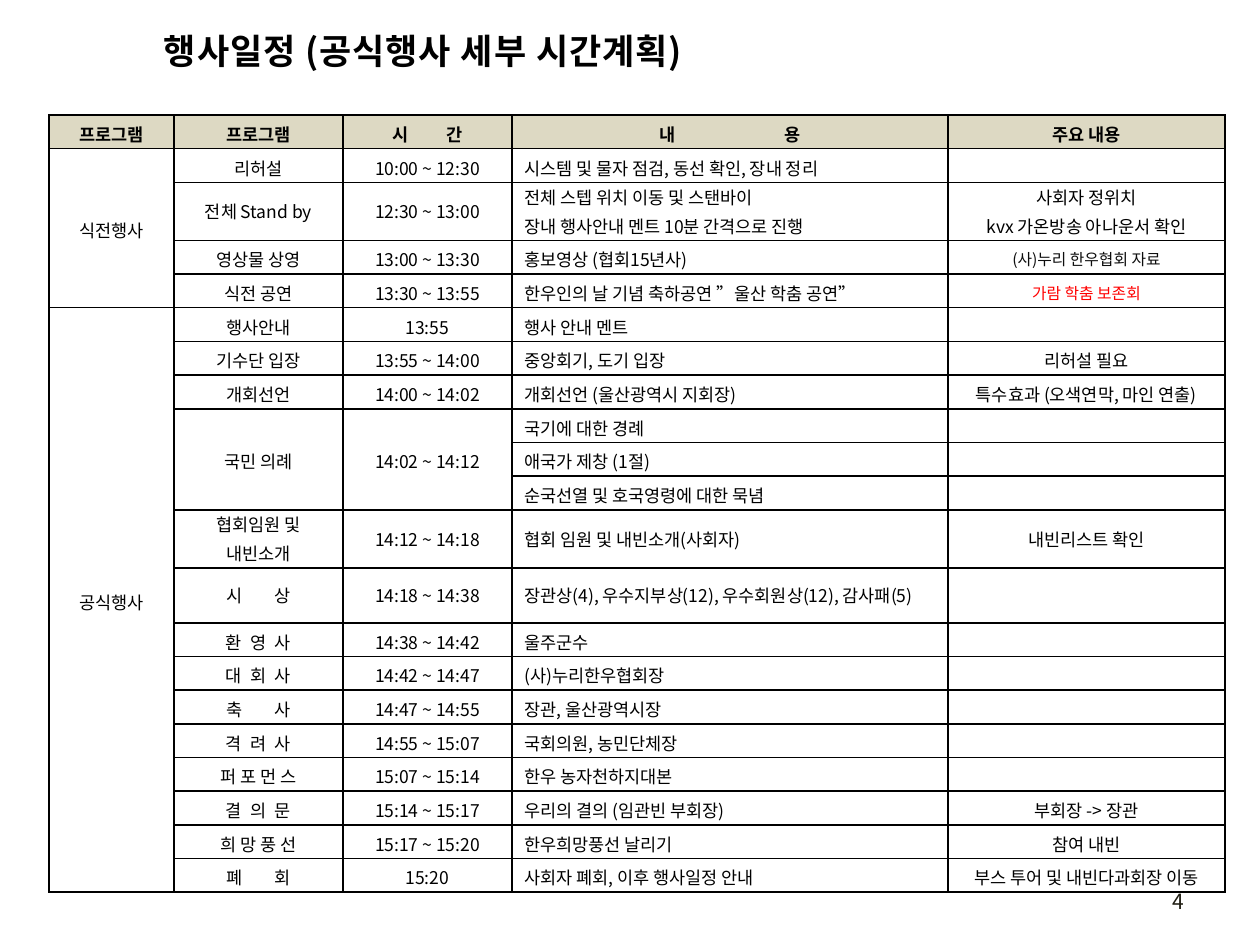
from typing import NamedTuple

from lxml.etree import SubElement
from pptx import Presentation
from pptx.dml.color import RGBColor
from pptx.enum.text import MSO_ANCHOR, PP_ALIGN
from pptx.oxml.ns import qn
from pptx.util import Pt

PX = 914400 // 126
FONT = "Noto Sans CJK KR"
COLORS = {"ink": "000000", "head": "DDD9C3", "soft": "0D0D0D",
          "red": "FF0000", "page": "1E1C11"}
COLS = [125, 169, 169, 436, 277]
BODY = 607          # height shared by the one-line rows
TALL = {2: 58, 11: 58, 12: 55}
# Letter spacing, in points, for words set wide
WIDE = {"시 간": 9.5, "내 용": 30, "시 상": 8, "축 사": 8, "폐 회": 8,
        "환 영 사": 1.3, "대 회 사": 1.3, "격 려 사": 1.3, "결 의 문": 1.3}
NOTES = {"(사)누리 한우협회 자료": "soft", "가람 학춤 보존회": "red"}


class Row(NamedTuple):
    name: str
    time: str
    text: str
    note: str = ""
    group: str = ""


class Span(NamedTuple):
    top: int
    col: int
    count: int


HEAD = Row("프로그램", "시 간", "내 용", "주요 내용", "프로그램")
ROWS = [
    HEAD,
    Row("리허설", "10:00 ~ 12:30", "시스템 및 물자 점검, 동선 확인, 장내 정리", group="식전행사"),
    Row("전체 Stand by", "12:30 ~ 13:00",
        "전체 스텝 위치 이동 및 스탠바이\n장내 행사안내 멘트 10분 간격으로 진행",
        "사회자 정위치\nkvx 가온방송 아나운서 확인"),
    Row("영상물 상영", "13:00 ~ 13:30", "홍보영상 (협회15년사)", "(사)누리 한우협회 자료"),
    Row("식전 공연", "13:30 ~ 13:55", "한우인의 날 기념 축하공연 ”울산 학춤 공연”", "가람 학춤 보존회"),
    Row("행사안내", "13:55", "행사 안내 멘트", group="공식행사"),
    Row("기수단 입장", "13:55 ~ 14:00", "중앙회기, 도기 입장", "리허설 필요"),
    Row("개회선언", "14:00 ~ 14:02", "개회선언 (울산광역시 지회장)", "특수효과 (오색연막, 마인 연출)"),
    Row("국민 의례", "14:02 ~ 14:12", "국기에 대한 경례"),
    Row("", "", "애국가 제창 (1절)"),
    Row("", "", "순국선열 및 호국영령에 대한 묵념"),
    Row("협회임원 및\n내빈소개", "14:12 ~ 14:18", "협회 임원 및 내빈소개(사회자)", "내빈리스트 확인"),
    Row("시 상", "14:18 ~ 14:38", "장관상(4), 우수지부상(12), 우수회원상(12), 감사패(5)"),
    Row("환 영 사", "14:38 ~ 14:42", "울주군수"),
    Row("대 회 사", "14:42 ~ 14:47", "(사)누리한우협회장"),
    Row("축 사", "14:47 ~ 14:55", "장관, 울산광역시장"),
    Row("격 려 사", "14:55 ~ 15:07", "국회의원, 농민단체장"),
    Row("퍼 포 먼 스", "15:07 ~ 15:14", "한우 농자천하지대본"),
    Row("결 의 문", "15:14 ~ 15:17", "우리의 결의 (임관빈 부회장)", "부회장 -> 장관"),
    Row("희 망 풍 선", "15:17 ~ 15:20", "한우희망풍선 날리기", "참여 내빈"),
    Row("폐 회", "15:20", "사회자 폐회, 이후 행사일정 안내", "부스 투어 및 내빈다과회장 이동"),
]
SPANS = [Span(1, 0, 4), Span(5, 0, 16), Span(8, 1, 3), Span(8, 2, 3)]


def put(frame, text: str, size: float = 10, color: str = "ink", bold: bool = False,
        align=PP_ALIGN.CENTER, before: float = 0, track: float = 0) -> None:
    """Write one paragraph per line; wide words get spaced letters."""
    for num, line in enumerate(text.split("\n")):
        para = frame.add_paragraph() if num else frame.paragraphs[0]
        para.alignment = align
        para.space_before = Pt(before)
        if not line:
            SubElement(para._p, qn("a:endParaRPr"), sz=str(int(size * 100)))
            continue
        gap = WIDE.get(line, 0)
        parts = [(line[:-1], gap), (line[-1], 0)] if gap else [(line, track)]
        for part, space in parts:
            run = para.add_run()
            run.text = part
            font = run.font
            font.size, font.bold, font.name = Pt(size), bold, FONT
            font.color.rgb = RGBColor.from_string(COLORS[color])
            props = run._r.get_or_add_rPr()
            SubElement(props, qn("a:ea"), typeface=FONT)
            if space:
                props.set("spc", str(int(space * 100)))


def edge(cell) -> None:
    """Draw thin lines on all four sides of a cell."""
    props = cell._tc.get_or_add_tcPr()
    for side in ("lnL", "lnR", "lnT", "lnB"):
        line = SubElement(props, qn(f"a:{side}"), w=str(Pt(1)))
        fill = SubElement(line, qn("a:solidFill"))
        SubElement(fill, qn("a:srgbClr"), val=COLORS["ink"])


def place(shape, left: int, top: int, width: int, height: int):
    """Move a text shape and return its frame, centred vertically."""
    shape.left, shape.top = left * PX, top * PX
    shape.width, shape.height = width * PX, height * PX
    frame = shape.text_frame
    frame.vertical_anchor = MSO_ANCHOR.MIDDLE
    return frame


def draw(slide) -> None:
    """Build the schedule table."""
    short = BODY * PX // (len(ROWS) - len(TALL))
    highs = [TALL[n] * PX if n in TALL else short for n in range(len(ROWS))]
    table = slide.shapes.add_table(len(ROWS), len(COLS), 49 * PX, 115 * PX,
                                   sum(COLS) * PX, sum(highs)).table
    table.first_row = table.horz_banding = False
    for col, width in zip(table.columns, COLS):
        col.width = width * PX
    for num, (row, high) in enumerate(zip(ROWS, highs)):
        table.rows[num].height = high
        head = row is HEAD
        texts = (row.group, row.name, row.time, row.text, row.note)
        for col, text in enumerate(texts):
            cell = table.cell(num, col)
            edge(cell)
            cell.margin_top = 0 if num in TALL else 4 * PX
            cell.margin_bottom = 0
            cell.vertical_anchor = MSO_ANCHOR.MIDDLE
            if head:
                cell.fill.solid()
                cell.fill.fore_color.rgb = RGBColor.from_string(COLORS["head"])
            else:
                cell.fill.background()
            put(cell.text_frame, text, size=9 if text in NOTES else 10,
                color=NOTES.get(text, "ink"), bold=head, before=2,
                align=PP_ALIGN.LEFT if col == 3 and not head else PP_ALIGN.CENTER)
    for top, col, count in SPANS:
        table.cell(top, col).merge(table.cell(top + count - 1, col))


def main() -> None:
    deck = Presentation()
    deck.slide_width, deck.slide_height = 1260 * PX, 945 * PX
    slide = deck.slides.add_slide(deck.slide_layouts[5])

    # Title
    frame = place(slide.shapes.title, 54, 26, 738, 49)
    frame.word_wrap = False
    put(frame, "행사일정 (공식행사 세부 시간계획)", size=20, bold=True, track=0.5)

    # Schedule
    draw(slide)

    # Page number
    frame = place(slide.shapes.add_textbox(0, 0, 0, 0), 903, 876, 294, 50)
    frame.word_wrap = True
    put(frame, "4", size=12, color="page", align=PP_ALIGN.RIGHT)

    deck.save("out.pptx")


if __name__ == "__main__":
    main()
